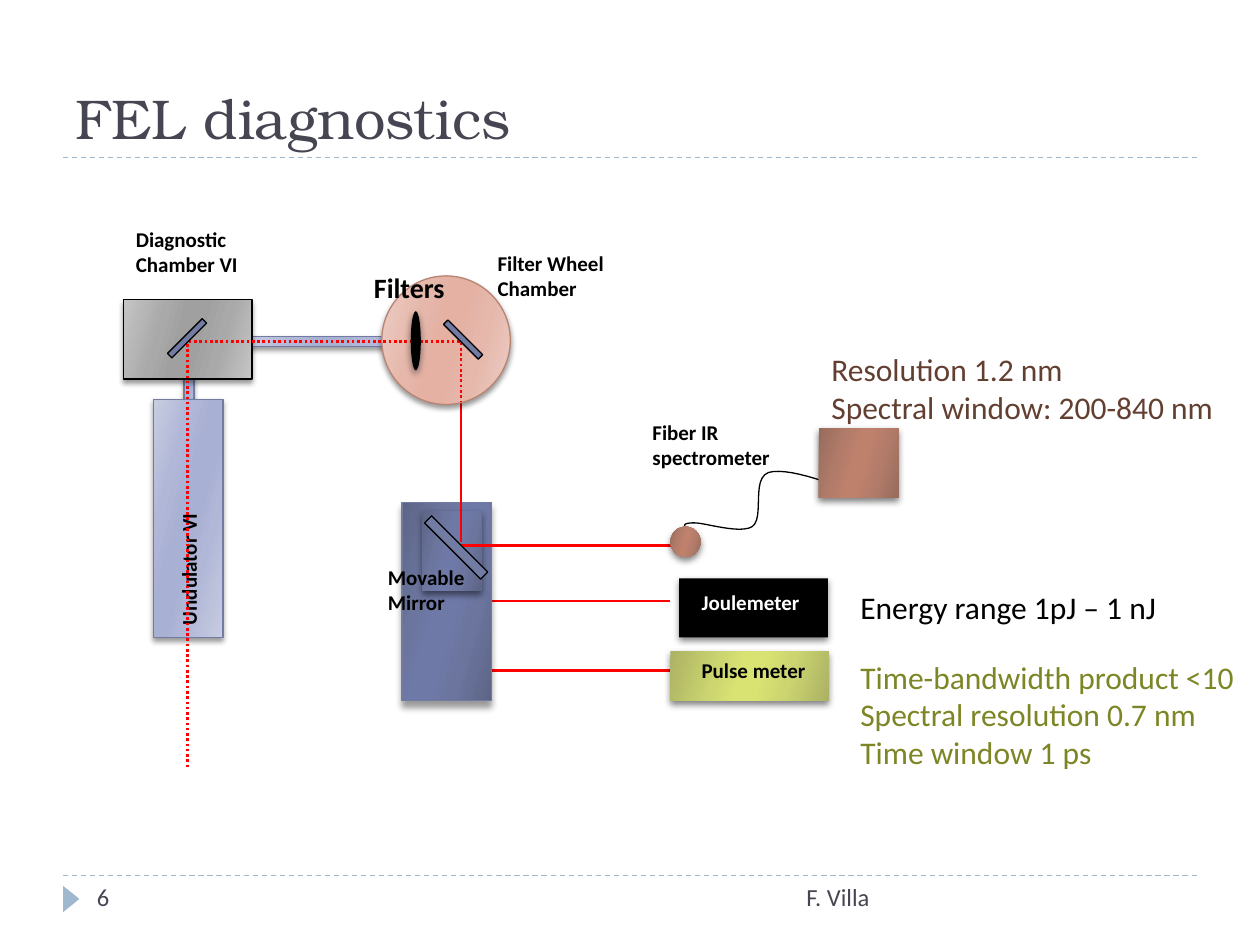
from lxml import etree
from pptx import Presentation
from pptx.dml.color import RGBColor
from pptx.enum.dml import MSO_LINE
from pptx.enum.shapes import MSO_CONNECTOR, MSO_SHAPE
from pptx.enum.text import MSO_ANCHOR, PP_ALIGN
from pptx.oxml.ns import qn
from pptx.util import Inches, Pt

RECT, OVAL, TRIANGLE = MSO_SHAPE.RECTANGLE, MSO_SHAPE.OVAL, MSO_SHAPE.ISOSCELES_TRIANGLE
STRAIGHT = MSO_CONNECTOR.STRAIGHT
DASH, DOT = MSO_LINE.DASH, MSO_LINE.ROUND_DOT
LEFT, CENTER, RIGHT = PP_ALIGN.LEFT, PP_ALIGN.CENTER, PP_ALIGN.RIGHT
TOP, MIDDLE, BOTTOM = MSO_ANCHOR.TOP, MSO_ANCHOR.MIDDLE, MSO_ANCHOR.BOTTOM

RED, BLACK, WHITE = "FF0000", "000000", "FFFFFF"
SLATE, SKY, INK = "727CA3", "9FB8CD", "464653"
BLUE = ("5D6585", "6B759E", "6E79A7")
LAVENDER = ("C9CDE2", "B1B7D7", "A8B0D3")
GRAY = ("C5C5C5", "A9A9A9", "A0A0A0")
BROWN = ("976C5D", "B37C6A", "BE816C")
PINK = ("ECCEC6", "E6B8AC", "E4B1A3")
LIME = ("ACB264", "CCD570", "D9E371")
TALL_SHADOW, SOFT_SHADOW, DARK_SHADOW = (40, 4, 3.4), (40, 3, 2), (50, 4, 2)

color = RGBColor.from_string


def write(frame, lines, size=12, ink=BLACK, bold=False, font="Calibri",
          align=LEFT, anchor=TOP, wrap=False):
    frame.word_wrap = wrap
    frame.vertical_anchor = anchor
    for index, line in enumerate(lines):
        para = frame.add_paragraph() if index else frame.paragraphs[0]
        para.alignment = align
        span = para.add_run()
        span.text = line
        span.font.name = font
        span.font.size = Pt(size)
        span.font.bold = bold
        span.font.color.rgb = color(ink)


def add_part(page, preset, place, fill, outline=None, shadow=None, turn=0):
    part = page.shapes.add_shape(preset, *map(Inches, place))
    part.rotation = turn
    part.shadow.inherit = False
    properties = part._element.spPr
    if isinstance(fill, tuple):
        edge, middle, core = fill
        part.fill.gradient()
        part.fill.gradient_angle = 344
        stops = properties.find(qn("a:gradFill")).find(qn("a:gsLst"))
        for stop in list(stops):
            stops.remove(stop)
        for percent, tone in ((0, edge), (30, middle), (45, core),
                              (55, core), (73, middle), (100, edge)):
            stop = etree.SubElement(stops, qn("a:gs"), pos=str(percent * 1000))
            etree.SubElement(stop, qn("a:srgbClr"), val=tone)
    else:
        part.fill.solid()
        part.fill.fore_color.rgb = color(fill)
    if outline:
        part.line.color.rgb = color(outline)
        part.line.width = Pt(0.75)
    else:
        part.line.fill.background()
    if shadow:
        opacity, blur, distance = shadow
        outer = etree.SubElement(
            properties.find(qn("a:effectLst")), qn("a:outerShdw"), blurRad=str(Pt(blur)),
            dist=str(Pt(distance)), dir="5400000", rotWithShape="0")
        tone = etree.SubElement(outer, qn("a:srgbClr"), val=BLACK)
        etree.SubElement(tone, qn("a:alpha"), val=str(opacity * 1000))
    return part


deck = Presentation()
deck.slide_width, deck.slide_height = Inches(10), Inches(7.5)
page = deck.slides.add_slide(deck.slide_layouts[5])

title = page.shapes.title
title.left, title.top, title.width, title.height = map(Inches, (0.5, 0.17, 9, 1.08))
write(title.text_frame, ["FEL diagnostics"], size=32, ink=INK,
      font="TeX Gyre Bonum", anchor=BOTTOM, wrap=True)

start = (6.81, 3.92)
fiber_curves = [
    ((6.53, 3.81), (6.24, 3.71), (6.1, 3.75)),
    ((5.96, 3.8), (6.07, 4.11), (5.97, 4.18)),
    ((5.87, 4.24), (5.6, 4.15), (5.51, 4.15)),
    ((5.42, 4.15), (5.43, 4.17), (5.44, 4.19)),
]
builder = page.shapes.build_freeform(*map(Inches, start))
points = []
for first, second, end in fiber_curves:
    for step in range(1, 13):
        t = step / 12
        points.append([
            Inches((1 - t) ** 3 * a + 3 * (1 - t) ** 2 * t * b + 3 * (1 - t) * t ** 2 * c + t ** 3 * d)
            for a, b, c, d in zip(start, first, second, end)])
    start = end
builder.add_line_segments(points, close=False)
fiber = builder.convert_to_shape()
fiber.shadow.inherit = False
fiber.fill.background()
fiber.line.color.rgb = color(BLACK)
fiber.line.width = Pt(0.75)

layers = [
    ([
        ((0.5, 6.95, 9.5, 6.95), SKY, 0.75, DASH),
        ((0.5, 1.25, 9.5, 1.25), SKY, 0.75, DASH),
        ((3.82, 5.32, 5.32, 5.32), RED, 1.5, None),
        ((3.9, 4.77, 5.32, 4.77), RED, 1.5, None),
    ], [
        (TRIANGLE, (0.46, 7.07, 0.21, 0.13), SKY, None, None, 90),
        (RECT, (3.19, 3.99, 0.71, 1.57), BLUE, SLATE, TALL_SHADOW),
        (RECT, (3.35, 4.06, 0.47, 0.63), BLUE, None, DARK_SHADOW),
        (RECT, (5.39, 4.59, 1.18, 0.47), BLACK, None, DARK_SHADOW),
    ]),
    ([
        ((3.66, 2.7, 3.66, 4.3), RED, 1.5, None),
        ((5.43, 4.33, 3.66, 4.33), RED, 1.5, None),
    ], [
        (RECT, (1.46, 2.93, 0.08, 0.32), LAVENDER, SLATE, SOFT_SHADOW),
        (RECT, (1.93, 2.67, 1.34, 0.08), LAVENDER, SLATE, SOFT_SHADOW),
        (RECT, (0.98, 2.38, 1.02, 0.63), GRAY, BLACK, SOFT_SHADOW),
        (OVAL, (5.32, 4.18, 0.24, 0.24), BROWN, None, DARK_SHADOW),
        (RECT, (6.5, 3.4, 0.63, 0.55), BROWN, None, DARK_SHADOW),
        (OVAL, (3.03, 2.19, 1.02, 1.02), PINK, "B88472", SOFT_SHADOW),
        (RECT, (5.32, 5.17, 1.26, 0.39), LIME, None, DARK_SHADOW),
        (RECT, (1.22, 3.17, 0.55, 1.89), LAVENDER, SLATE, SOFT_SHADOW, 180),
    ]),
    ([
        ((1.49, 2.73, 1.49, 6.11), RED, 1.5, DOT),
        ((3.69, 2.71, 1.46, 2.71), RED, 1.5, DOT),
        ((3.66, 2.72, 3.66, 3.19), RED, 1.5, DOT),
    ], [
        (RECT, (1.46, 2.49, 0.05, 0.39), SLATE, BLACK, None, 45),
        (RECT, (3.58, 4.03, 0.08, 0.63), SLATE, BLACK, None, 135),
        (RECT, (3.65, 2.5, 0.05, 0.39), SLATE, BLACK, None, 135),
        (OVAL, (3.26, 2.47, 0.08, 0.47), BLACK, None, DARK_SHADOW),
    ]),
]
for lines, parts in layers:
    for ends, ink, width, dash in lines:
        beam = page.shapes.add_connector(STRAIGHT, *map(Inches, ends))
        beam.line.color.rgb = color(ink)
        beam.line.width = Pt(width)
        if dash:
            beam.line.dash_style = dash
        etree.SubElement(beam._element.spPr, qn("a:effectLst"))
    for part in parts:
        shape = add_part(page, *part)
        if part[1] == (1.22, 3.17, 0.55, 1.89):
            write(shape.text_frame, ["Undulator VI"], bold=True, align=CENTER, anchor=MIDDLE)
            shape.text_frame._txBody.bodyPr.set("vert", "eaVert")

label = {"bold": True}
wide_label = {"bold": True, "wrap": True}
footer = {"size": 14, "ink": INK, "wrap": True}
texts = [
    ((0.98, 1.75, 1.1, 0.71), ["Diagnostic", "Chamber VI"], wide_label),
    ((3.85, 1.94, 1.18, 0.5), ["Filter Wheel", "Chamber"], wide_label),
    ((2.98, 4.43, 0.92, 0.5), ["Movable", "Mirror"], label),
    ((5.08, 3.28, 1.14, 0.5), ["Fiber IR", "spectrometer"], label),
    ((5.47, 4.63, 0.99, 0.3), ["Joulemeter"], {"bold": True, "ink": WHITE}),
    ((5.47, 5.17, 1.03, 0.3), ["Pulse meter"], label),
    ((2.87, 2.1, 0.77, 0.37), ["Filters"], {"bold": True, "size": 16}),
    ((6.5, 2.73, 3.27, 0.71), ["Resolution 1.2 nm", "Spectral window: 200-840 nm"],
     {"size": 18, "ink": "633F32"}),
    ((6.73, 4.62, 2.58, 0.4), ["Energy range 1pJ – 1 nJ"], {"size": 18}),
    ((6.73, 5.17, 3.2, 1.01),
     ["Time-bandwidth product <10", "Spectral resolution 0.7 nm", "Time window 1 ps"],
     {"size": 18, "ink": "7D8525"}),
    ((0.67, 6.95, 2.17, 0.4), ["6"], footer),
    ((3.17, 6.95, 3.83, 0.4), ["F. Villa"], {**footer, "align": RIGHT}),
]
for place, lines, style in texts:
    box = page.shapes.add_textbox(*map(Inches, place))
    write(box.text_frame, lines, **style)

deck.save("out.pptx")
